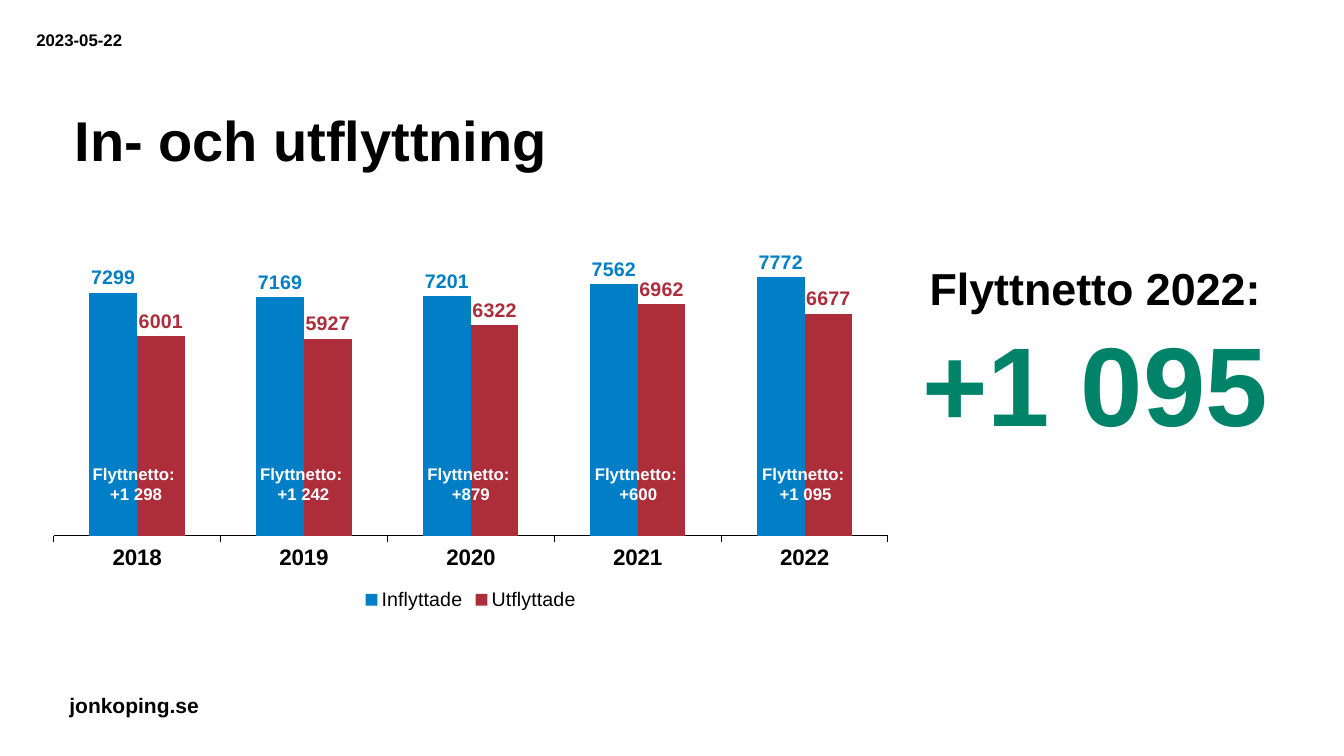
"""Builds the slide on people moving in and out, with a column chart and the net figures."""
from pptx import Presentation
from pptx.chart.data import CategoryChartData
from pptx.dml.color import RGBColor
from pptx.enum.chart import XL_CHART_TYPE, XL_LABEL_POSITION, XL_LEGEND_POSITION, XL_TICK_MARK
from pptx.enum.text import MSO_ANCHOR, PP_ALIGN
from pptx.util import Inches, Pt

BLACK = RGBColor(0x00, 0x00, 0x00)
WHITE = RGBColor(0xFF, 0xFF, 0xFF)
BLUE = RGBColor(0x00, 0x7F, 0xC7)
RED = RGBColor(0xAD, 0x2D, 0x3A)
GREEN = RGBColor(0x00, 0x83, 0x69)
FONT = "Arial"
LEFT, CENTER = PP_ALIGN.LEFT, PP_ALIGN.CENTER
TOP, BOTTOM = MSO_ANCHOR.TOP, MSO_ANCHOR.BOTTOM
COLUMNS = XL_CHART_TYPE.COLUMN_CLUSTERED
OUTSIDE_END = XL_LABEL_POSITION.OUTSIDE_END
LEGEND_BOTTOM = XL_LEGEND_POSITION.BOTTOM
TICK_OUTSIDE, TICK_NONE = XL_TICK_MARK.OUTSIDE, XL_TICK_MARK.NONE

YEARS = ["2018", "2019", "2020", "2021", "2022"]
MOVED_IN = [7299, 7169, 7201, 7562, 7772]
MOVED_OUT = [6001, 5927, 6322, 6962, 6677]


def style(font, size, color=BLACK, bold=True):
    """Sets the typeface, size, colour and weight of a font."""
    font.name, font.size, font.bold = FONT, Pt(size), bold
    font.color.rgb = color


def add_text(page, lines, place, align=LEFT, anchor=TOP, wrap=True, inset=True, spacing=None):
    """Adds a text box with one paragraph for each (text, size, colour) line."""
    box = page.shapes.add_textbox(*(Inches(length) for length in place))
    frame = box.text_frame
    frame.word_wrap, frame.vertical_anchor = wrap, anchor
    if not inset:
        frame.margin_left = frame.margin_right = frame.margin_top = frame.margin_bottom = 0
    for index, (text, size, color) in enumerate(lines):
        para = frame.add_paragraph() if index else frame.paragraphs[0]
        para.alignment, para.line_spacing = align, spacing
        span = para.add_run()
        span.text = text
        style(span.font, size, color)
    return box


deck = Presentation()
deck.slide_width, deck.slide_height = Inches(13.33), Inches(7.5)
page = deck.slides.add_slide(deck.slide_layouts[6])

add_text(page, [("jonkoping.se", 15, BLACK)], (0.59, 6.82, 1.5, 0.35), wrap=False)
add_text(page, [("2023-05-22", 12, BLACK)], (0.36, 0.3, 0.98, 0.2), inset=False)
add_text(page, [("In- och utflyttning", 40, BLACK)], (0.74, 0.5, 11.84, 1.22),
         anchor=BOTTOM, inset=False, spacing=0.9)

chart_data = CategoryChartData()
chart_data.categories = YEARS
chart_data.add_series("Inflyttade", MOVED_IN)
chart_data.add_series("Utflyttade", MOVED_OUT)
chart = page.shapes.add_chart(COLUMNS, Inches(0.36), Inches(2.27), Inches(8.62), Inches(3.83),
                              chart_data).chart
style(chart.font, 10, bold=False)
chart.has_title = False
chart.has_legend = True
chart.legend.position = LEGEND_BOTTOM
chart.legend.include_in_layout = False
style(chart.legend.font, 14, bold=False)

year_axis = chart.category_axis
year_axis.major_tick_mark, year_axis.minor_tick_mark = TICK_OUTSIDE, TICK_NONE
year_axis.format.line.color.rgb = BLACK
year_axis.format.line.width = Pt(0.75)
style(year_axis.tick_labels.font, 16)

people_axis = chart.value_axis
people_axis.visible = False
people_axis.has_major_gridlines = False
people_axis.minimum_scale, people_axis.maximum_scale = 0, 9000

plot = chart.plots[0]
plot.gap_width, plot.overlap, plot.vary_by_categories = 150, 0, False
for series, color in zip(plot.series, (BLUE, RED)):
    series.format.fill.solid()
    series.format.fill.fore_color.rgb = color
    labels = series.data_labels
    labels.show_value, labels.position = True, OUTSIDE_END
    style(labels.font, 14, color)

net_texts = [f"{moved_in - moved_out:+,}".replace(",", " ")
             for moved_in, moved_out in zip(MOVED_IN, MOVED_OUT)]
for index, net_text in enumerate(net_texts):
    add_text(page, [("Flyttnetto: ", 12, WHITE), (net_text, 12, WHITE)],
             (0.81 + 1.66 * index, 4.55, 1.08, 0.5), align=CENTER)

net_box = add_text(page, [("Flyttnetto 2022: ", 32, BLACK), (net_texts[-1], 80, GREEN)],
                   (9.03, 2.54, 3.79, 1.99), align=CENTER, wrap=False)
space = net_box.text_frame.paragraphs[-1].add_run()
space.text = " "
style(space.font, 32, GREEN)

deck.save("out.pptx")
